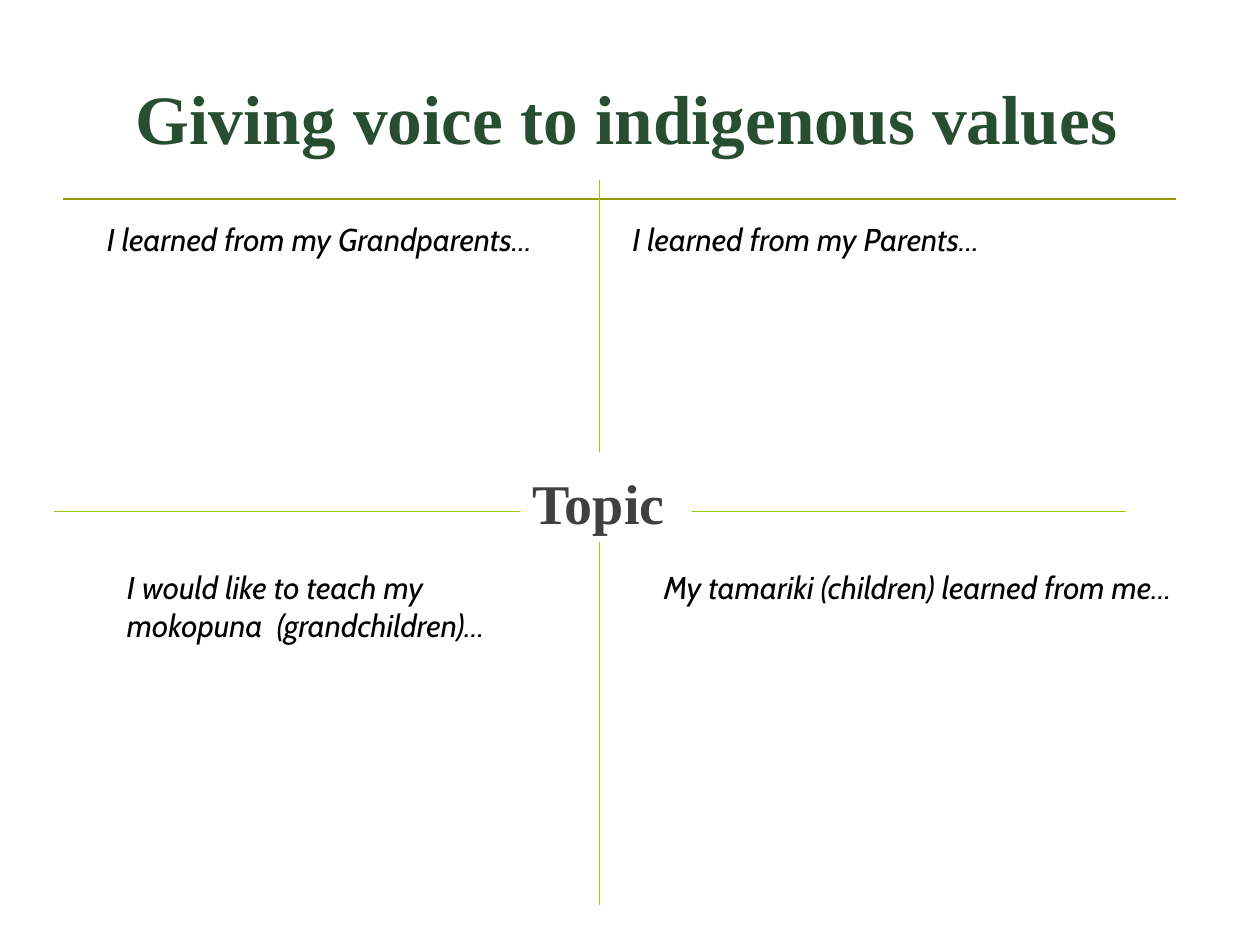
import pptx
import pptx.util
import pptx.dml.color
import pptx.enum.shapes
import pptx.enum.text
import pptx.oxml.ns
import lxml.etree
from dataclasses import dataclass

Inches = pptx.util.Inches
Anchor = pptx.enum.text.MSO_ANCHOR


@dataclass(frozen=True)
class Theme:
    heading_font: str = "Times New Roman"
    prompt_font: str = "Cabin"
    title_size: float = 39.6
    topic_size: float = 32
    prompt_size: float = 18
    title_color: str = "284E31"
    topic_color: str = "404040"
    prompt_color: str = "000000"
    rule_color: str = "999900"
    axis_color: str = "96C800"
    paper: str = "FFFFFF"


THEME = Theme()
TITLE = ("Giving voice to indigenous values", (0.98, 0.3, 8.52, 1.25))
TOPIC = ("Topic", (4.13, 3.59, 1.36, 0.71))
UPPER, LOWER = 1.7, 4.46
PROMPTS = [
    ("I learned from my Grandparents…", (0.75, UPPER, 4.09, 0.4), False),
    ("I learned from my Parents…", (4.92, UPPER, 3.42, 0.4), False),
    ("My tamariki (children) learned from me…", (5.17, LOWER, 4.83, 0.4), False),
    ("I would like to teach my mokopuna  (grandchildren)…", (0.91, LOWER, 3.66, 0.71), True),
]
LINES = [
    ((0.5, 1.58), (9.33, 1.58), THEME.rule_color, 1.5),
    ((4.76, 1.43), (4.76, 7.18), THEME.axis_color, 0.75),
    ((0.43, 4.06), (8.94, 4.06), THEME.axis_color, 0.75),
]


def rgb(value):
    return pptx.dml.color.RGBColor.from_string(value)


def draw_line(slide, start, end, color, weight):
    line = slide.shapes.add_connector(
        pptx.enum.shapes.MSO_CONNECTOR.STRAIGHT, *map(Inches, start + end))
    line.line.color.rgb = rgb(color)
    line.line.width = pptx.util.Pt(weight)
    properties = line._element.spPr
    lxml.etree.SubElement(properties, pptx.oxml.ns.qn("a:effectLst"))


def write(slide, text, place, font, size, color, bold=False, italic=False,
          wrap=True, anchor=Anchor.TOP):
    box = slide.shapes.add_textbox(*map(Inches, place))
    frame = box.text_frame
    frame.word_wrap = wrap
    frame.vertical_anchor = anchor
    run = frame.paragraphs[0].add_run()
    run.text = text
    run.font.name = font
    run.font.size = pptx.util.Pt(size)
    run.font.color.rgb = rgb(color)
    run.font.bold = bold
    run.font.italic = italic
    return box


def main():
    """Build a four-quadrant slide of family learning prompts around a topic."""
    deck = pptx.Presentation()
    deck.slide_width, deck.slide_height = Inches(10), Inches(7.5)
    slide = deck.slides.add_slide(deck.slide_layouts[6])
    for line in LINES:
        draw_line(slide, *line)
    topic = write(slide, *TOPIC, THEME.heading_font, THEME.topic_size,
                  THEME.topic_color, bold=True, anchor=Anchor.BOTTOM)
    topic.fill.solid()
    topic.fill.fore_color.rgb = rgb(THEME.paper)
    for prompt, place, wrap in PROMPTS:
        write(slide, prompt, place, THEME.prompt_font, THEME.prompt_size,
              THEME.prompt_color, italic=True, wrap=wrap)
    write(slide, *TITLE, THEME.heading_font, THEME.title_size,
          THEME.title_color, bold=True, anchor=Anchor.MIDDLE)
    deck.save("out.pptx")


if __name__ == "__main__":
    main()
